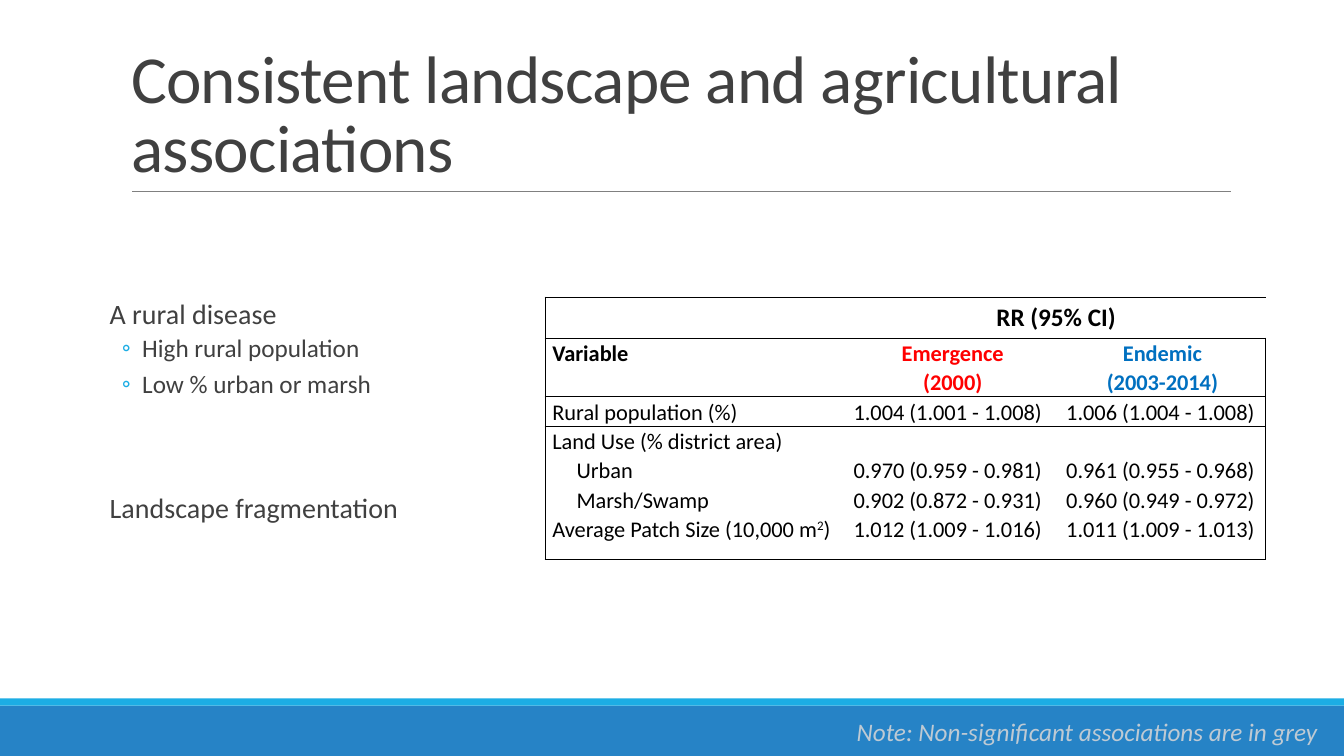
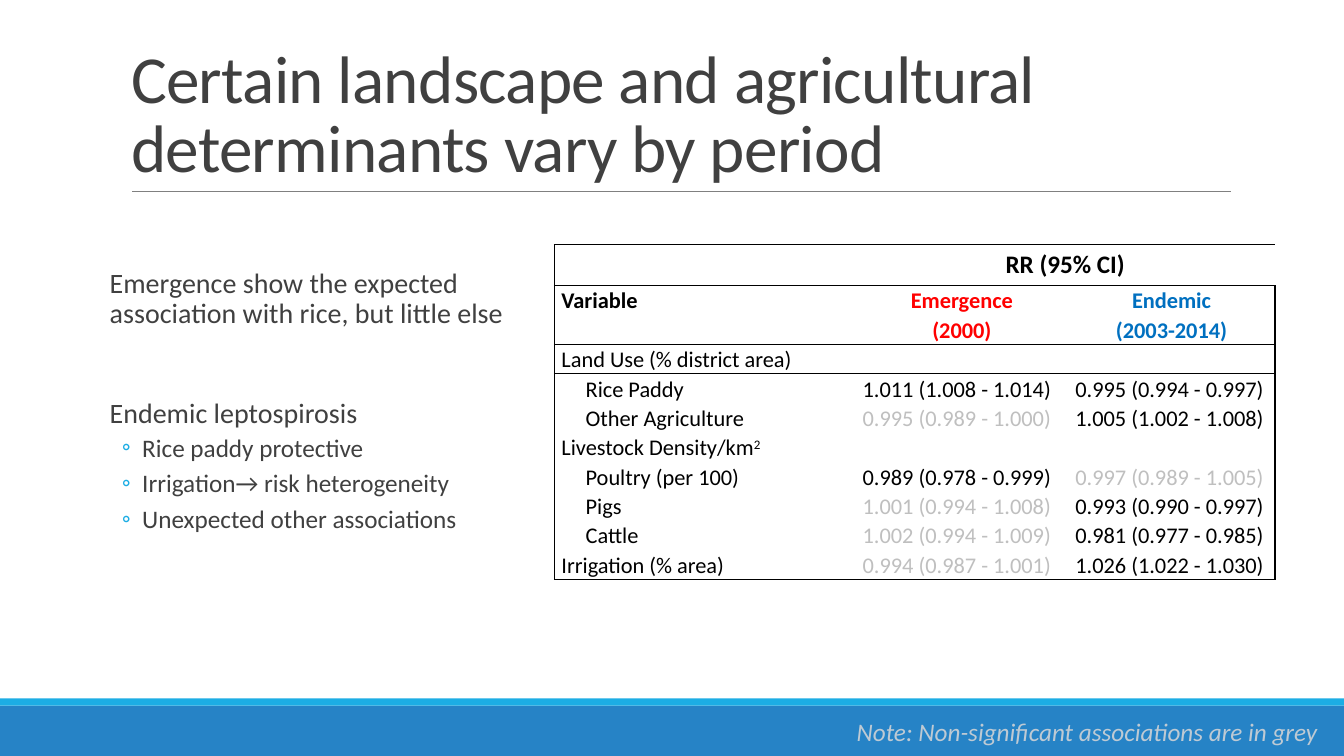
from lxml import etree
from pptx import Presentation
from pptx.dml.color import RGBColor
from pptx.enum.shapes import MSO_CONNECTOR, MSO_SHAPE
from pptx.enum.text import MSO_ANCHOR, MSO_AUTO_SIZE, PP_ALIGN
from pptx.oxml.ns import qn
from pptx.util import Cm, Pt

RECTANGLE, STRAIGHT = MSO_SHAPE.RECTANGLE, MSO_CONNECTOR.STRAIGHT
TOP, BOTTOM = MSO_ANCHOR.TOP, MSO_ANCHOR.BOTTOM
LEFT, CENTER = PP_ALIGN.LEFT, PP_ALIGN.CENTER
FIXED = MSO_AUTO_SIZE.NONE

FONT = "Calibri"
BLUE = RGBColor(0x26, 0x83, 0xC6)
CYAN = RGBColor(0x1C, 0xAD, 0xE4)
RULE_GREY = RGBColor(0x80, 0x80, 0x80)
DARK = RGBColor(0x40, 0x40, 0x40)
NOTE_GREY = RGBColor(0xBE, 0xCA, 0xD4)
BLACK = RGBColor(0, 0, 0)
FAINT = RGBColor(0xBF, 0xBF, 0xBF)
RED = RGBColor(0xFF, 0, 0)
ENDEMIC_BLUE = RGBColor(0, 0x70, 0xC0)

SLIDE_W, SLIDE_H = Cm(33.87), Cm(19.05)
TITLE_BOX = (Cm(3.05), Cm(0.79), Cm(27.94), Cm(4.03))
NOTE_BOX = (Cm(21.34), Cm(17.93), Cm(12.34), Cm(1.02))
BODY_LEFT, BODY_WIDTH, BODY_BOTTOM = Cm(2.26), Cm(11.15), Cm(17.3)
BANDS = [(Cm(17.78), Cm(1.27), BLUE), (Cm(17.6), Cm(0.18), CYAN)]
COL_WIDTHS = [Cm(7.59), Cm(5.36), Cm(5.21)]
HEAD_HEIGHTS, ROW_HEIGHT = [Cm(1.02), Cm(1.48)], Cm(0.74)
CELL_MARGIN, CELL_INDENT = Cm(0.18), Cm(0.61)

NOTE = "Note: Non-significant associations are in grey"
SPAN_HEAD = "RR (95% CI)"
COLUMN_HEADS = [
    (["Variable"], BLACK, LEFT),
    (["Emergence", "(2000)"], RED, CENTER),
    (["Endemic", "(2003-2014)"], ENDEMIC_BLUE, CENTER),
]

# Points: (level, text, space before in points)
# Rows: (level, label, emergence, endemic), each estimate as (RR, low, high);
# "^" raises the character after it.
SLIDES = [
    {
        "title": "Consistent landscape and agricultural associations",
        "body_top": Cm(7.44),
        "points": [
            (0, "A rural disease", 0),
            (1, "High rural population", 2),
            (1, "Low % urban or marsh", 2),
            (0, "Landscape fragmentation", 64),
        ],
        "table_at": (Cm(13.74), Cm(7.49)),
        "last_height": Cm(1.14),
        "rows": [
            (0, "Rural population (%)", (1.004, 1.001, 1.008), (1.006, 1.004, 1.008)),
            (0, "Land Use (% district area)", None, None),
            (1, "Urban", (0.970, 0.959, 0.981), (0.961, 0.955, 0.968)),
            (1, "Marsh/Swamp", (0.902, 0.872, 0.931), (0.960, 0.949, 0.972)),
            (0, "Average Patch Size (10,000 m^2)", (1.012, 1.009, 1.016), (1.011, 1.009, 1.013)),
        ],
    },
    {
        "title": "Certain landscape and agricultural determinants vary by period",
        "body_top": Cm(6.65),
        "points": [
            (0, "Emergence show the expected association with rice, but little else", 0),
            (0, "Endemic leptospirosis", 48),
            (1, "Rice paddy protective", 2),
            (1, "Irrigation→ risk heterogeneity", 2),
            (1, "Unexpected other associations", 2),
        ],
        "table_at": (Cm(13.97), Cm(6.17)),
        "last_height": ROW_HEIGHT,
        "rows": [
            (0, "Land Use (% district area)", None, None),
            (1, "Rice Paddy", (1.011, 1.008, 1.014), (0.995, 0.994, 0.997)),
            (1, "Other Agriculture", (0.995, 0.989, 1.000), (1.005, 1.002, 1.008)),
            (0, "Livestock Density/km^2", None, None),
            (1, "Poultry (per 100)", (0.989, 0.978, 0.999), (0.997, 0.989, 1.005)),
            (1, "Pigs", (1.001, 0.994, 1.008), (0.993, 0.990, 0.997)),
            (1, "Cattle", (1.002, 0.994, 1.009), (0.981, 0.977, 0.985)),
            (0, "Irrigation (% area)", (0.994, 0.987, 1.001), (1.026, 1.022, 1.030)),
        ],
    },
]


def write(p, text, size=16, color=BLACK, bold=False, italic=False, align=LEFT,
          line=1.0, before=0, after=0, tracking=0):
    """Fill a paragraph; a character after "^" becomes superscript."""
    p.alignment, p.line_spacing = align, line
    p.space_before, p.space_after = Pt(before), Pt(after)
    plain, _, raised = text.partition("^")
    for part, baseline in ((plain, 0), (raised[:1], 30000), (raised[1:], 0)):
        if not part:
            continue
        r = p.add_run()
        r.text = part
        f = r.font
        f.name, f.size, f.bold, f.italic = FONT, Pt(size), bold, italic
        f.color.rgb = color
        rPr = r._r.get_or_add_rPr()
        if baseline:
            rPr.set("baseline", str(baseline))
        if tracking:
            rPr.set("spc", str(tracking))
    if not text:
        etree.SubElement(p._p, qn("a:endParaRPr"), sz=str(size * 100))


def paragraphs(tf, count):
    return [tf.paragraphs[0]] + [tf.add_paragraph() for _ in range(count - 1)]


def set_indent(p, left, hanging=0, bullet=None):
    pPr = p._p.get_or_add_pPr()
    pPr.set("marL", str(left))
    pPr.set("indent", str(-hanging))
    if bullet:
        clr = etree.SubElement(pPr, qn("a:buClr"))
        etree.SubElement(clr, qn("a:srgbClr"), val=str(CYAN))
        etree.SubElement(pPr, qn("a:buFont"), typeface=FONT)
        etree.SubElement(pPr, qn("a:buChar"), char=bullet)
    else:
        etree.SubElement(pPr, qn("a:buNone"))


def place(shape, left, top, width, height):
    shape.left, shape.top, shape.width, shape.height = left, top, width, height


def dress_layout(layout, slide):
    """Put bands and title rule on the layout, built by way of a slide."""
    place(layout.placeholders[0], *TITLE_BOX)
    parts = []
    for top, height, color in BANDS:
        sp = slide.shapes.add_shape(RECTANGLE, 0, top, SLIDE_W, height)
        sp.shadow.inherit = False
        sp.fill.solid()
        sp.fill.fore_color.rgb = color
        sp.line.fill.background()
        parts.append(sp)
    rule = slide.shapes.add_connector(STRAIGHT, Cm(3.33), Cm(4.83), Cm(31.02), Cm(4.83))
    rule.line.color.rgb = RULE_GREY
    rule.line.width = Pt(0.5)
    etree.SubElement(rule.element.spPr, qn("a:effectLst"))
    for part in parts + [rule]:
        layout.shapes.element.append(part.element)


def add_title(slide, text):
    tf = slide.shapes.title.text_frame
    tf.auto_size, tf.vertical_anchor, tf.word_wrap = FIXED, BOTTOM, True
    write(tf.paragraphs[0], text, size=48, color=DARK, line=0.85, tracking=-50)


def add_points(slide, top, points):
    body = slide.placeholders[1]
    place(body, BODY_LEFT, top, BODY_WIDTH, BODY_BOTTOM - top)
    tf = body.text_frame
    tf.auto_size, tf.vertical_anchor, tf.word_wrap = FIXED, TOP, True
    for p, (level, text, before) in zip(paragraphs(tf, len(points)), points):
        p.level = level
        write(p, text, size=18 if level else 20, color=DARK, line=0.9,
              before=before, after=4 if level else 2)
        if level:
            set_indent(p, Cm(1.07), Cm(0.51), "◦")
        else:
            set_indent(p, Cm(0.25))


def add_note(slide):
    tf = slide.shapes.add_textbox(*NOTE_BOX).text_frame
    tf.word_wrap = True
    write(tf.paragraphs[0], NOTE, size=18, color=NOTE_GREY, italic=True)


def set_borders(cell, sides):
    tcPr = cell._tc.get_or_add_tcPr()
    for side in sides:
        ln = etree.SubElement(tcPr, qn(f"a:ln{side}"), w=str(Pt(1)))
        fill = etree.SubElement(ln, qn("a:solidFill"))
        etree.SubElement(fill, qn("a:srgbClr"), val=str(BLACK))


def fill_cell(cell, lines, indent=0, **fmt):
    cell.margin_left = cell.margin_right = CELL_MARGIN
    cell.margin_top = cell.margin_bottom = 0
    for p, text in zip(paragraphs(cell.text_frame, len(lines)), lines):
        write(p, text, line=1.07, **fmt)
        if indent:
            set_indent(p, indent)


def fill_estimate(cell, estimate):
    """Show an estimate, faint when its interval contains 1."""
    if estimate is None:
        fill_cell(cell, [""])
        return
    rr, low, high = estimate
    fill_cell(cell, [f"{rr:.3f} ({low:.3f} - {high:.3f})"],
              color=FAINT if low <= 1 <= high else BLACK)


def add_risk_table(slide, at, rows, last_height):
    heights = HEAD_HEIGHTS + [ROW_HEIGHT] * (len(rows) - 1) + [last_height]
    table = slide.shapes.add_table(len(heights), len(COL_WIDTHS), *at,
                                   sum(COL_WIDTHS), sum(heights)).table
    table.first_row = table.horz_banding = False
    style = table._tbl.tblPr.find(qn("a:tableStyleId"))
    style.text = "{2D5ABB26-0587-4C30-8999-92F81FD0307C}"
    for column, width in zip(table.columns, COL_WIDTHS):
        column.width = width
    last_row, last_col = len(heights) - 1, len(COL_WIDTHS) - 1
    for i, height in enumerate(heights):
        table.rows[i].height = height
        for j in range(last_col + 1):
            edges = {"L": j == 0, "R": j == last_col, "T": i <= 2,
                     "B": i in (0, 1, last_row)}
            cell = table.cell(i, j)
            set_borders(cell, [side for side, drawn in edges.items() if drawn])
            cell.fill.background()

    span = table.cell(0, 1)
    span.merge(table.cell(0, 2))
    write(span.text_frame.paragraphs[0], SPAN_HEAD, size=18, bold=True, align=CENTER)
    for j, (lines, color, align) in enumerate(COLUMN_HEADS):
        fill_cell(table.cell(1, j), lines, color=color, bold=True, align=align)
    for i, (level, label, *estimates) in enumerate(rows, len(HEAD_HEIGHTS)):
        fill_cell(table.cell(i, 0), [label], indent=level * CELL_INDENT)
        for j, estimate in enumerate(estimates, 1):
            fill_estimate(table.cell(i, j), estimate)


def main():
    prs = Presentation()
    prs.slide_width, prs.slide_height = SLIDE_W, SLIDE_H
    layout = prs.slide_layouts[1]
    slides = [prs.slides.add_slide(layout) for _ in SLIDES]
    dress_layout(layout, slides[0])
    for slide, content in zip(slides, SLIDES):
        add_title(slide, content["title"])
        add_risk_table(slide, content["table_at"], content["rows"], content["last_height"])
        add_points(slide, content["body_top"], content["points"])
        add_note(slide)
    prs.save("out.pptx")


if __name__ == "__main__":
    main()
